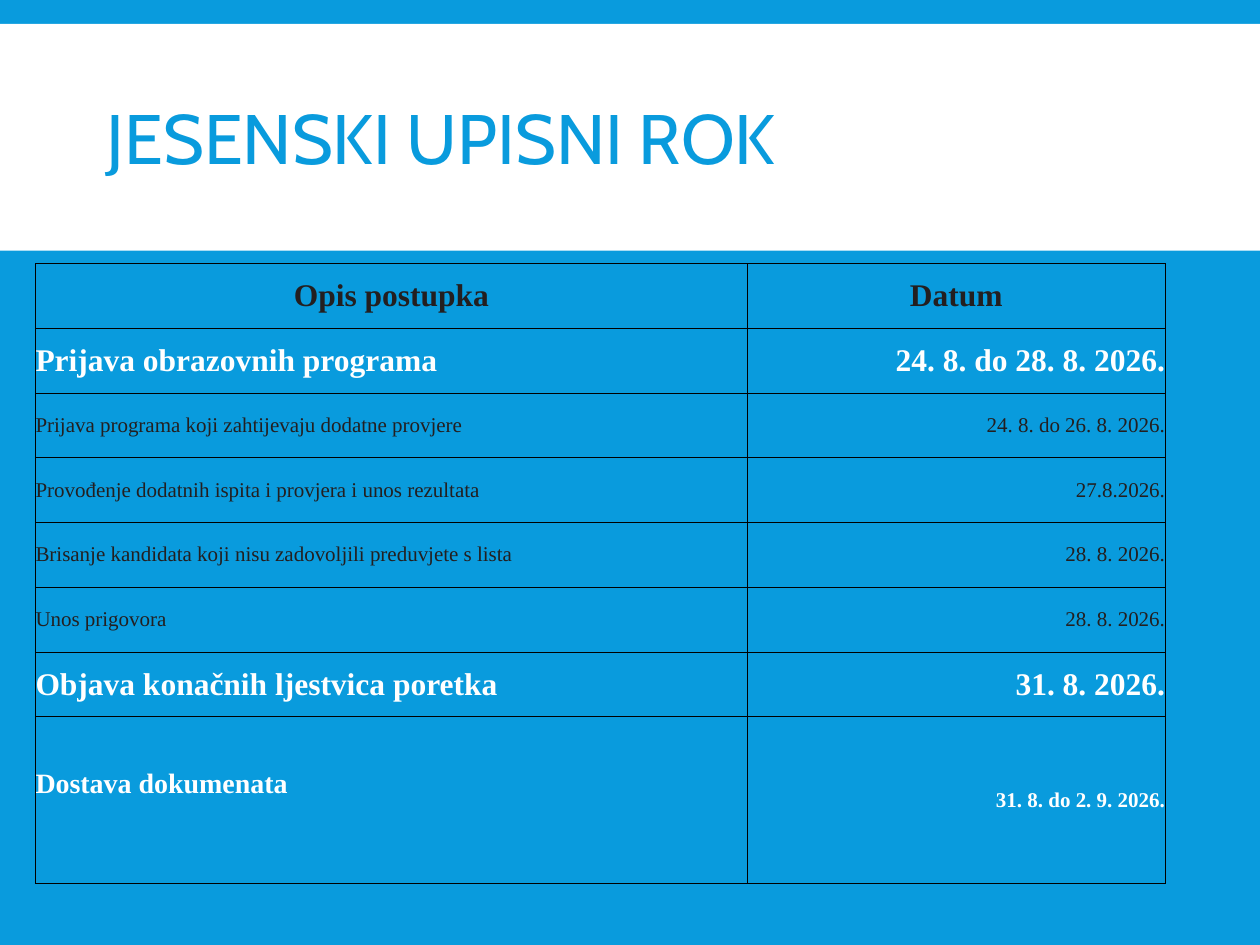
from dataclasses import dataclass

from lxml import etree
from pptx import Presentation
from pptx.dml.color import RGBColor
from pptx.enum import shapes, text
from pptx.oxml import ns
from pptx.util import Pt


@dataclass(frozen=True)
class Theme:
    blue: str = "099BDD"
    white: str = "FFFFFF"
    dark: str = "231F20"
    line: str = "000000"
    head: str = "Cabin"
    body: str = "Times New Roman"
    title: int = 40
    large: int = 18
    medium: int = 16
    small: int = 12
    border: float = 0.6


class Deck:
    def __init__(self, theme):
        self.theme = theme
        self.prs = Presentation()
        self.prs.slide_width, self.prs.slide_height = Pt(720), Pt(540)
        self.slide = self.prs.slides.add_slide(self.prs.slide_layouts[6])
        self.paint(self.slide.background.fill, theme.blue)

    def paint(self, fill, color):
        fill.solid()
        fill.fore_color.rgb = RGBColor.from_string(color)

    def label(self, para, words, face, size, color, bold=False):
        para.text = words
        font = para.font
        font.name, font.size, font.bold = face, Pt(size), bold
        font.color.rgb = RGBColor.from_string(color)

    def band(self, x, y, w, h):
        box = self.slide.shapes.add_shape(
            shapes.MSO_SHAPE.RECTANGLE, Pt(x), Pt(y), Pt(w), Pt(h))
        box.shadow.inherit = False
        self.paint(box.fill, self.theme.white)
        box.line.fill.background()

    def title(self, x, y, w, h, words):
        box = self.slide.shapes.add_textbox(Pt(x), Pt(y), Pt(w), Pt(h))
        frame = box.text_frame
        frame.word_wrap = True
        frame.vertical_anchor = text.MSO_ANCHOR.MIDDLE
        para = frame.paragraphs[0]
        para.line_spacing = 0.85
        self.label(para, words, self.theme.head, self.theme.title, self.theme.blue)

    def frame(self, cell):
        """Draw a thin line on all four sides of a cell."""
        props = cell._tc.get_or_add_tcPr()
        for side in ("a:lnL", "a:lnR", "a:lnT", "a:lnB"):
            line = etree.SubElement(props, ns.qn(side), w=str(Pt(self.theme.border)))
            fill = etree.SubElement(line, ns.qn("a:solidFill"))
            etree.SubElement(fill, ns.qn("a:srgbClr"), val=self.theme.line)

    def cell(self, cell, words, align, size, color, bold, lift=0):
        """Fill one cell; lift is the space kept free under its text."""
        cell.margin_left = cell.margin_right = cell.margin_top = 0
        cell.margin_bottom = Pt(lift)
        cell.vertical_anchor = text.MSO_ANCHOR.MIDDLE
        self.frame(cell)
        cell.fill.background()
        para = cell.text_frame.paragraphs[0]
        para.alignment = align
        self.label(para, words, self.theme.body, size, color, bold)

    def table(self, x, y, cols, rows):
        grid = self.slide.shapes.add_table(
            len(rows), len(cols), Pt(x), Pt(y), Pt(sum(cols)), Pt(sum(rows))).table
        grid.first_row = grid.horz_banding = False
        for col, width in zip(grid.columns, cols):
            col.width = Pt(width)
        for row, height in zip(grid.rows, rows):
            row.height = Pt(height)
        return grid


def main():
    theme = Theme()
    deck = Deck(theme)
    deck.band(0, 13.7, 720, 129.6)
    deck.title(54, 22.3, 612, 118.8, "JESENSKI UPISNI ROK")

    left, mid, right = text.PP_ALIGN.LEFT, text.PP_ALIGN.CENTER, text.PP_ALIGN.RIGHT
    head = (theme.large, theme.dark, True)
    main_step = (theme.large, theme.white, True)
    step = (theme.small, theme.dark, False)
    plan = [
        ("Opis postupka", "Datum", head),
        ("Prijava obrazovnih programa", "24. 8. do 28. 8. 2026.", main_step),
        ("Prijava programa koji zahtijevaju dodatne provjere",
         "24. 8. do 26. 8. 2026.", step),
        ("Provođenje dodatnih ispita i provjera i unos rezultata", "27.8.2026.", step),
        ("Brisanje kandidata koji nisu zadovoljili preduvjete s lista",
         "28. 8. 2026.", step),
        ("Unos prigovora", "28. 8. 2026.", step),
        ("Objava konačnih ljestvica poretka", "31. 8. 2026.", main_step),
    ]
    grid = deck.table(20.3, 150.6, [406.8, 238.7], [37] * len(plan) + [95.4])
    for row, (task, date, style) in enumerate(plan):
        sides = (mid, mid) if style is head else (left, right)
        for col, words in enumerate((task, date)):
            deck.cell(grid.cell(row, col), words, sides[col], *style)
    last = len(plan)
    deck.cell(grid.cell(last, 0), "Dostava dokumenata", left,
              theme.medium, theme.white, True, lift=18)
    deck.cell(grid.cell(last, 1), "31. 8. do 2. 9. 2026.", right,
              theme.small, theme.white, True)
    deck.prs.save("out.pptx")


if __name__ == "__main__":
    main()
